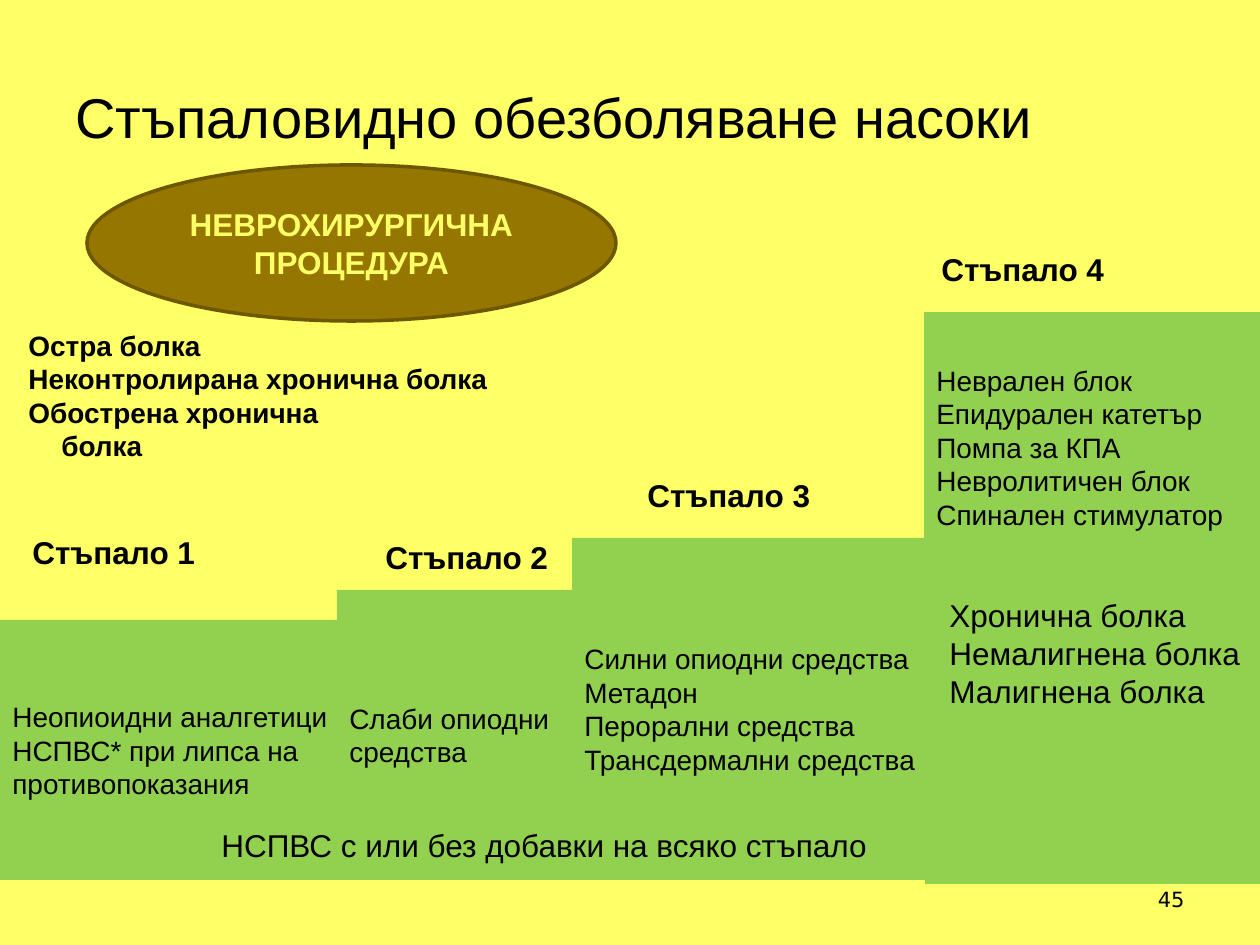
from pptx import Presentation
from pptx.dml.color import RGBColor
from pptx.enum.shapes import MSO_SHAPE
from pptx.enum.text import MSO_ANCHOR, PP_ALIGN
from pptx.util import Pt

YELLOW = RGBColor(0xFF, 0xFF, 0x66)
GREEN = RGBColor(0x92, 0xD0, 0x50)
BROWN = RGBColor(0x94, 0x76, 0x00)
DARK_BROWN = RGBColor(0x6D, 0x57, 0x00)
BLACK = RGBColor(0, 0, 0)
SCALE = 914400 / 126


def px(n):
    return int(n * SCALE)


def write(sp, text, size=16, bold=False, color=BLACK, font="Arial",
          align=PP_ALIGN.LEFT, anchor=MSO_ANCHOR.TOP, wrap=True):
    tf = sp.text_frame
    tf.word_wrap = wrap
    tf.vertical_anchor = anchor
    for i, line in enumerate(text.split("\n")):
        p = tf.paragraphs[0] if i == 0 else tf.add_paragraph()
        p.alignment = align
        r = p.add_run()
        r.text = line
        r.font.size = Pt(size)
        r.font.bold = bold
        r.font.name = font
        r.font.color.rgb = color
    return tf


def add_box(kind, x, y, w, h, fill):
    sp = s.shapes.add_shape(kind, px(x), px(y), px(w), px(h))
    sp.shadow.inherit = False
    sp.fill.solid()
    sp.fill.fore_color.rgb = fill
    sp.line.fill.background()
    return sp


prs = Presentation()
prs.slide_width = px(1260)
prs.slide_height = px(945)
s = prs.slides.add_slide(prs.slide_layouts[6])
s.background.fill.solid()
s.background.fill.fore_color.rgb = YELLOW

steps = [
    (925, 559, 336, 325, ""),
    (337, 590, 299, 290, "Слаби опиодни\nсредства"),
    (0, 620, 337, 260, "Неопиоидни аналгетици\nНСПВС* при липса на\nпротивопоказания"),
    (572, 538, 396, 342, "Силни опиодни средства\nМетадон\nПерорални средства\nТрансдермални средства"),
    (924, 312, 336, 270, "Неврален блок\nЕпидурален катетър\nПомпа за КПА\nНевролитичен блок\nСпинален стимулатор"),
]
for x, y, w, h, text in steps:
    sp = add_box(MSO_SHAPE.RECTANGLE, x, y, w, h, GREEN)
    if text:
        write(sp, text, anchor=MSO_ANCHOR.MIDDLE, wrap=False)

sp = s.shapes.add_textbox(px(63), px(38), px(1134), px(157))
write(sp, "Стъпаловидно обезболяване насоки", size=32, anchor=MSO_ANCHOR.MIDDLE)

sp = add_box(MSO_SHAPE.OVAL, 87, 165, 529, 156, BROWN)
sp.line.color.rgb = DARK_BROWN
sp.line.width = Pt(2)
write(sp, "НЕВРОХИРУРГИЧНА\nПРОЦЕДУРА", size=18, bold=True, color=YELLOW,
      align=PP_ALIGN.CENTER, anchor=MSO_ANCHOR.MIDDLE)

sp = s.shapes.add_textbox(px(16), px(322), px(563), px(148))
tf = write(sp, "Остра болка\nНеконтролирана хронична болка\nОбострена хронична\nболка", bold=True)
tf.paragraphs[-1]._p.get_or_add_pPr().set("marL", str(px(33)))

for number, x, y in [(1, 20, 527), (2, 373, 532), (3, 635, 470), (4, 929, 244)]:
    sp = s.shapes.add_textbox(px(x), px(y), px(189), px(50))
    write(sp, f"Стъпало {number}", size=18, bold=True)

sp = s.shapes.add_textbox(px(209), px(820), px(677), px(50))
write(sp, "НСПВС с или без добавки на всяко стъпало", size=18)

sp = s.shapes.add_textbox(px(937), px(590), px(319), px(165))
write(sp, "Хронична болка\nНемалигнена болка\nМалигнена болка", size=18)

sp = s.shapes.add_textbox(px(924), px(880), px(273), px(65))
write(sp, "45", size=12, font="DejaVu Sans", align=PP_ALIGN.RIGHT)

prs.save("out.pptx")
